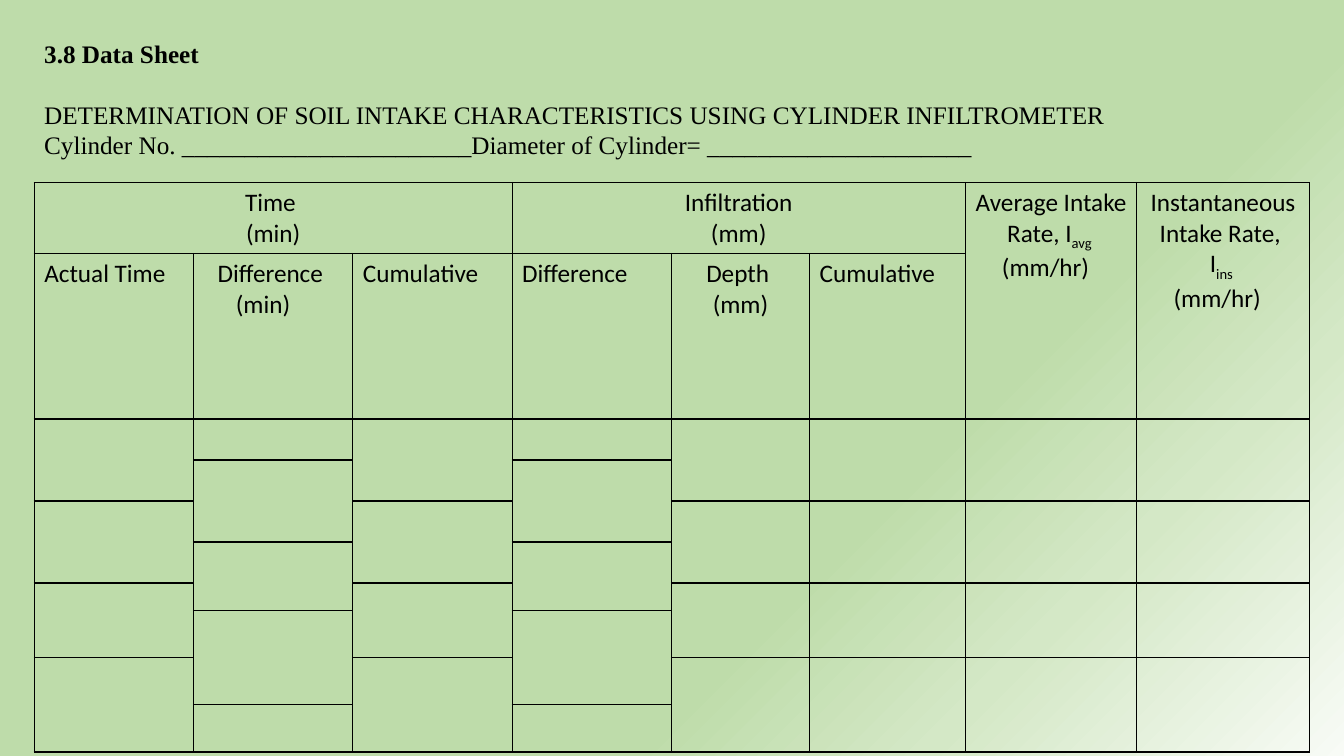
"""Build the cylinder infiltrometer data sheet slide."""
from lxml.etree import SubElement
from pptx import Presentation
from pptx.dml.color import RGBColor
from pptx.enum.text import PP_ALIGN
from pptx.oxml import parse_xml
from pptx.oxml.ns import nsdecls, qn
from pptx.util import Pt

HEADING = [
    ("3.8 Data Sheet", True, 0),
    ("DETERMINATION OF SOIL INTAKE CHARACTERISTICS USING CYLINDER INFILTROMETER", False, 22),
    ("Cylinder No. _______________________Diameter of Cylinder= _____________________", False, 0),
]
CENTER, LEFT = PP_ALIGN.CENTER, PP_ALIGN.LEFT
# (row, column): lines of (alignment, left indent, text, subscript)
HEADERS = {
    (0, 0): [(CENTER, 0, "Time ", ""), (CENTER, 0, "(min)", "")],
    (0, 3): [(CENTER, 0, "Infiltration", ""), (CENTER, 0, "(mm)", "")],
    (0, 6): [(CENTER, 0, "Average Intake Rate, I", "avg "), (LEFT, 19, "(mm/hr)", "")],
    (0, 7): [(CENTER, 0, "Instantaneous Intake Rate, ", ""), (CENTER, 0, "I", "ins "),
             (LEFT, 19, "(mm/hr)", "")],
    (1, 0): [(LEFT, 0, "Actual Time", "")],
    (1, 1): [(CENTER, 0, "Difference ", ""), (LEFT, 23, "(min)", "")],
    (1, 2): [(LEFT, 0, "Cumulative", "")],
    (1, 3): [(LEFT, 0, "Difference", "")],
    (1, 4): [(CENTER, 0, "Depth ", ""), (CENTER, 0, "(mm)", "")],
    (1, 5): [(LEFT, 0, "Cumulative", "")],
}
COL_WIDTHS = [113.8] * 4 + [98.7, 111.2, 122.6, 123.1]
ROW_HEIGHTS = [50.7, 118.3] + [29.3] * 4 + [19.4] + [33.8] * 3
STAGGERED = (1, 3)
HEADER_SPANS = [((0, 0), (0, 2)), ((0, 3), (0, 5)), ((0, 6), (1, 6)), ((0, 7), (1, 7))]
THEME = {
    "ink": "000000",
    "glow": [(0, "F8FBF6"), (20, "D4E8C6"), (34, "BEDCAA"), (67, "BEDCAA"), (100, "BEDCAA")],
    "heading": {"name": "Times New Roman", "size": Pt(18)},
    "table": {"name": "Calibri", "size": Pt(18)},
    "border": Pt(1),
}
LEFT_EDGE, WIDTH = 24.5, 910.8


def add_run(p, text, style, **extra):
    r = p.add_run()
    r.text = text
    for name, value in {**THEME[style], **extra}.items():
        setattr(r.font, name, value)
    r.font.color.rgb = RGBColor.from_string(THEME["ink"])
    return r


def paint_background(s):
    stops = "".join(f'<a:gs pos="{pos * 1000}"><a:srgbClr val="{color}"/></a:gs>'
                    for pos, color in THEME["glow"])
    fill = s.background.fill
    fill.gradient()
    bg_pr = s.background._cSld.bg.bgPr
    bg_pr.replace(bg_pr.find(qn("a:gradFill")), parse_xml(
        f'<a:gradFill {nsdecls("a")} rotWithShape="1"><a:gsLst>{stops}</a:gsLst>'
        '<a:path path="circle"><a:fillToRect l="100000" t="100000"/></a:path></a:gradFill>'))


def add_heading(s):
    tf = s.shapes.add_textbox(Pt(LEFT_EDGE), Pt(23.8), Pt(WIDTH), Pt(94.3)).text_frame
    tf.word_wrap = True
    for i, (text, bold, before) in enumerate(HEADING):
        p = tf.add_paragraph() if i else tf.paragraphs[0]
        p.space_before = Pt(before)
        add_run(p, text, "heading", bold=bold)


def outline(cell):
    tc_pr = cell._tc.get_or_add_tcPr()
    for side in ("lnL", "lnR", "lnT", "lnB"):
        ln = SubElement(tc_pr, qn(f"a:{side}"), w=str(THEME["border"]))
        SubElement(SubElement(ln, qn("a:solidFill")), qn("a:srgbClr"), val=THEME["ink"])
    cell.fill.background()


def write_header(cell, lines):
    tf = cell.text_frame
    for i, (align, indent, text, subscript) in enumerate(lines):
        p = tf.add_paragraph() if i else tf.paragraphs[0]
        p.alignment = align
        if indent:
            p._p.get_or_add_pPr().set("marL", str(Pt(indent)))
        add_run(p, text, "table")
        if subscript:
            r = add_run(p, subscript, "table")
            r._r.get_or_add_rPr().set("baseline", "-25000")


def add_data_table(s):
    rows, cols = len(ROW_HEIGHTS), len(COL_WIDTHS)
    table = s.shapes.add_table(rows, cols, Pt(LEFT_EDGE), Pt(130.3), Pt(WIDTH),
                               Pt(sum(ROW_HEIGHTS))).table
    for name in ("first_row", "horz_banding"):
        setattr(table, name, False)
    for column, width in zip(table.columns, COL_WIDTHS):
        column.width = Pt(width)
    for row, height in zip(table.rows, ROW_HEIGHTS):
        row.height = Pt(height)
    for cell in table.iter_cells():
        outline(cell)
    pairs = [((row, col), (row + 1, col)) for col in range(cols)
             for row in range(3 if col in STAGGERED else 2, rows - 1, 2)]
    for first, last in HEADER_SPANS + pairs:
        table.cell(*first).merge(table.cell(*last))
    for place, lines in HEADERS.items():
        write_header(table.cell(*place), lines)


def main():
    prs = Presentation()
    prs.slide_width, prs.slide_height = Pt(960), Pt(540)
    s = prs.slides.add_slide(prs.slide_layouts[6])
    paint_background(s)
    add_heading(s)
    add_data_table(s)
    prs.save("out.pptx")


if __name__ == "__main__":
    main()
